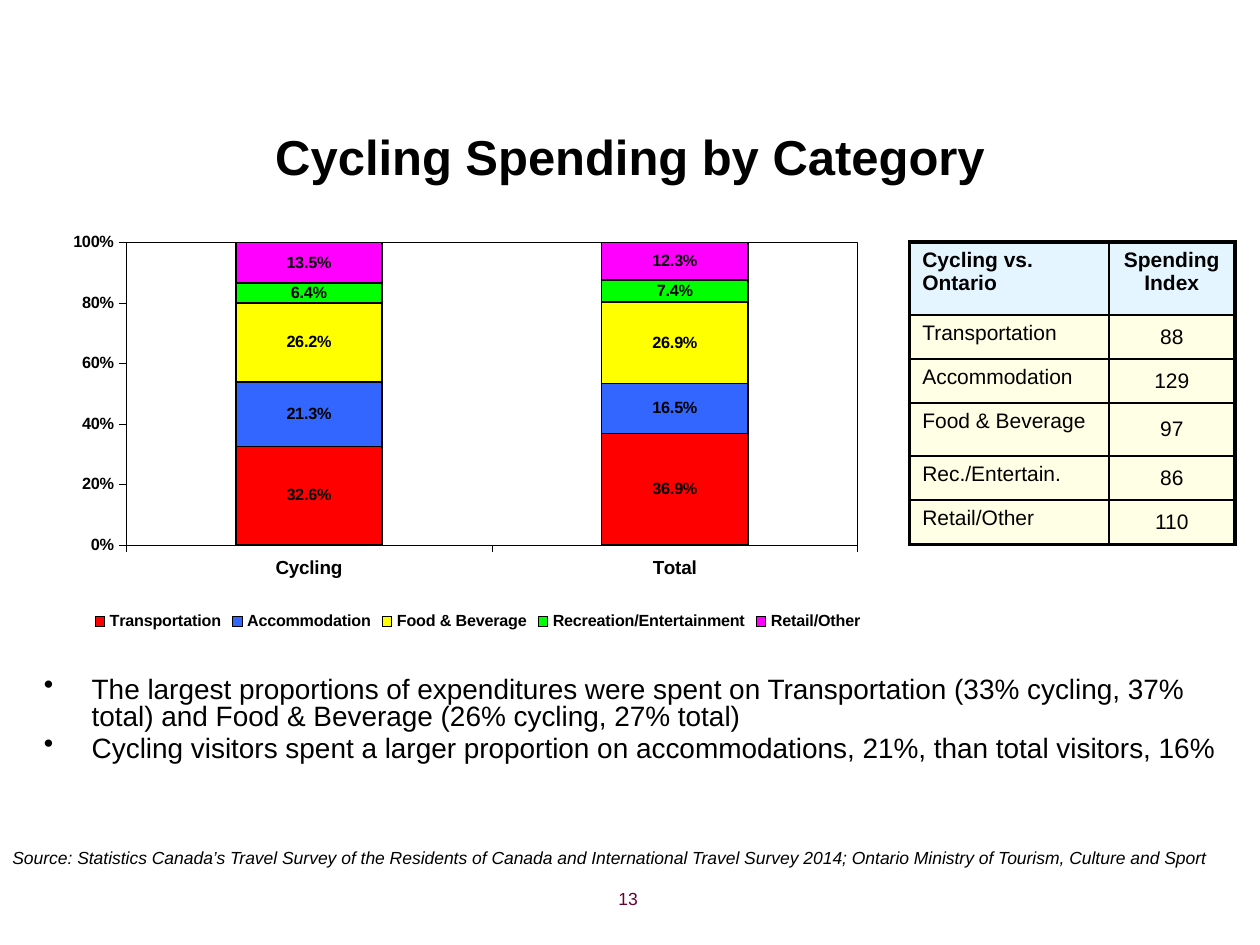
from lxml import etree
from pptx import Presentation
from pptx import util as u
from pptx.chart.data import CategoryChartData
from pptx.dml.color import RGBColor
from pptx.enum import chart as ch
from pptx.enum import text
from pptx.oxml import parse_xml
from pptx.oxml.ns import nsdecls, qn

FONT = "Arial"
BLACK = RGBColor(0x00, 0x00, 0x00)
MAROON = RGBColor(0x66, 0x00, 0x33)
PALE_BLUE = RGBColor(0xCC, 0xEC, 0xFF)
PALE_YELLOW = RGBColor(0xFF, 0xFF, 0xCC)
RED = RGBColor(0xFF, 0x00, 0x00)
BLUE = RGBColor(0x33, 0x66, 0xFF)
YELLOW = RGBColor(0xFF, 0xFF, 0x00)
GREEN = RGBColor(0x00, 0xFF, 0x00)
MAGENTA = RGBColor(0xFF, 0x00, 0xFF)

SPENDING = [
    ("Transportation", (0.326, 0.369), RED),
    ("Accommodation", (0.213, 0.165), BLUE),
    ("Food & Beverage", (0.262, 0.269), YELLOW),
    ("Recreation/Entertainment", (0.064, 0.074), GREEN),
    ("Retail/Other", (0.135, 0.123), MAGENTA),
]
INDEX_ROWS = [
    ("Cycling vs. Ontario", "Spending Index", 0.58),
    ("Transportation", "88", 0.35),
    ("Accommodation", "129", 0.35),
    ("Food & Beverage", "97", 0.42),
    ("Rec./Entertain.", "86", 0.35),
    ("Retail/Other", "110", 0.35),
]
FINDINGS = [
    "The largest proportions of expenditures were spent on Transportation "
    "(33% cycling, 37% total) and Food & Beverage (26% cycling, 27% total)",
    "Cycling visitors spent a larger proportion on accommodations, 21%, "
    "than total visitors, 16%",
]
SOURCE = (
    "Source: Statistics Canada’s Travel Survey of the Residents of Canada and "
    "International Travel Survey 2014; Ontario Ministry of Tourism, Culture and Sport"
)


def inches(box):
    """Turn a box of plain numbers into lengths."""
    return [u.Inches(value) for value in box]


def style_font(font, size, color=BLACK, bold=False, italic=False):
    """Set the face, size, colour and weight of a font."""
    font.name, font.size = FONT, u.Pt(size)
    font.bold, font.italic = bold, italic
    font.color.rgb = color


def add_run(paragraph, words, size, **style):
    """Append one styled run to a paragraph."""
    run = paragraph.add_run()
    run.text = words
    style_font(run.font, size, **style)


def add_text_frame(slide, box):
    """Add a wrapping text box and return its frame."""
    frame = slide.shapes.add_textbox(*inches(box)).text_frame
    frame.word_wrap = True
    return frame


def add_title(slide, box):
    """Place and fill the title placeholder."""
    title = slide.shapes.title
    title.left, title.top, title.width, title.height = inches(box)
    title.text_frame.vertical_anchor = text.MSO_ANCHOR.MIDDLE
    paragraph = title.text_frame.paragraphs[0]
    paragraph.alignment = text.PP_ALIGN.CENTER
    add_run(paragraph, "Cycling Spending by Category", 28, bold=True)


def set_layout(parent, position, x, y, width, height, inner=False):
    """Give a chart part a manual layout in fractions of the chart."""
    for old in parent.findall(qn("c:layout")):
        parent.remove(old)
    layout = etree.Element(qn("c:layout"))
    manual = etree.SubElement(layout, qn("c:manualLayout"))
    settings = [("layoutTarget", "inner")] if inner else []
    settings += [("xMode", "edge"), ("yMode", "edge")]
    settings += [("x", x), ("y", y), ("w", width), ("h", height)]
    for name, value in settings:
        etree.SubElement(manual, qn(f"c:{name}")).set("val", str(value))
    parent.insert(position, layout)


def style_axis(axis, size):
    """Give an axis its font, thin line and outer ticks."""
    style_font(axis.tick_labels.font, size, bold=True)
    axis.format.line.color.rgb = BLACK
    axis.format.line.width = u.Pt(0.25)
    axis.major_tick_mark = ch.XL_TICK_MARK.OUTSIDE
    axis.minor_tick_mark = ch.XL_TICK_MARK.NONE
    axis.has_major_gridlines = False


def add_spending_chart(slide, box):
    """Add the stacked chart of spending shares."""
    data = CategoryChartData(number_format="0.0%")
    data.categories = ["Cycling", "Total"]
    for name, values, _ in SPENDING:
        data.add_series(name, values)
    chart = slide.shapes.add_chart(
        ch.XL_CHART_TYPE.COLUMN_STACKED_100, *inches(box), data
    ).chart
    chart.has_title = False
    style_font(chart.font, 9.3, bold=True)

    plot = chart.plots[0]
    plot.gap_width, plot.overlap, plot.vary_by_categories = 150, 100, False
    for series, (_, _, color) in zip(plot.series, SPENDING):
        series.format.fill.solid()
        series.format.fill.fore_color.rgb = color
        series.format.line.color.rgb = BLACK
        series.format.line.width = u.Pt(1)
        labels = series.data_labels
        labels.show_value = True
        labels.number_format, labels.number_format_is_linked = "0.0%", False
        style_font(labels.font, 9.3, bold=True)

    style_axis(chart.category_axis, 10.8)
    axis = chart.value_axis
    style_axis(axis, 9.3)
    axis.minimum_scale, axis.maximum_scale, axis.major_unit = 0, 1, 0.2
    axis.tick_labels.number_format = "0%"
    axis.tick_labels.number_format_is_linked = False

    chart.has_legend = True
    legend = chart.legend
    legend.position = ch.XL_LEGEND_POSITION.BOTTOM
    legend.include_in_layout = False
    style_font(legend.font, 9.2, bold=True)
    set_layout(legend._element, 1, 0.06, 0.79, 0.94, 0.07)

    area = chart._chartSpace.chart.plotArea
    set_layout(area, 0, 0.105, 0.033, 0.884, 0.632, inner=True)
    area.append(parse_xml(
        f'<c:spPr {nsdecls("c", "a")}><a:noFill/><a:ln w="3175"><a:solidFill>'
        f'<a:srgbClr val="{BLACK}"/></a:solidFill></a:ln></c:spPr>'
    ))


def style_cell(cell, color, thick_sides):
    """Draw the borders of a cell and its half-transparent fill."""
    properties = cell._tc.get_or_add_tcPr()
    for side in "LRTB":
        width = u.Pt(2.25 if side in thick_sides else 1)
        properties.append(parse_xml(
            f'<a:ln{side} {nsdecls("a")} w="{width}"><a:solidFill>'
            f'<a:srgbClr val="{BLACK}"/></a:solidFill></a:ln{side}>'
        ))
    cell.fill.solid()
    cell.fill.fore_color.rgb = color
    shade = properties.find(qn("a:solidFill")).find(qn("a:srgbClr"))
    etree.SubElement(shade, qn("a:alpha")).set("val", "50000")


def add_index_table(slide, box):
    """Add the table of spending indexes."""
    table = slide.shapes.add_table(len(INDEX_ROWS), 2, *inches(box)).table
    table.first_row = table.horz_banding = False
    for column, width in zip(table.columns, (1.58, 1)):
        column.width = u.Inches(width)
    for i, (*words, height) in enumerate(INDEX_ROWS):
        table.rows[i].height = u.Inches(height)
        header, last = i == 0, i == len(INDEX_ROWS) - 1
        for j, label in enumerate(words):
            cell = table.cell(i, j)
            sides = "LR"[j] + ("T" if header else "") + ("B" if last else "")
            style_cell(cell, PALE_BLUE if header else PALE_YELLOW, sides)
            paragraph = cell.text_frame.paragraphs[0]
            if j:
                paragraph.alignment = text.PP_ALIGN.CENTER
            if j and not header:
                cell.vertical_anchor = text.MSO_ANCHOR.MIDDLE
                cell.margin_left = cell.margin_right = 0
                cell.margin_top = cell.margin_bottom = 0
            add_run(paragraph, label, 12, bold=header)


def add_findings(slide, box):
    """Add the bulleted findings."""
    frame = add_text_frame(slide, box)
    for i, words in enumerate(FINDINGS):
        paragraph = frame.add_paragraph() if i else frame.paragraphs[0]
        properties = paragraph._p.get_or_add_pPr()
        properties.set("marL", str(u.Inches(0.38)))
        properties.set("indent", str(-u.Inches(0.38)))
        etree.SubElement(properties, qn("a:buChar")).set("char", "•")
        paragraph.line_spacing = 0.8
        if i:
            paragraph.space_before = u.Pt(3.2)
        add_run(paragraph, words, 16)


def add_line(slide, box, words, alignment, **style):
    """Add a small single-line text."""
    paragraph = add_text_frame(slide, box).paragraphs[0]
    paragraph.alignment = alignment
    add_run(paragraph, words, 10, **style)


def main():
    """Build the slide and save it."""
    presentation = Presentation()
    presentation.slide_width, presentation.slide_height = inches((10, 7.5))
    slide = presentation.slides.add_slide(presentation.slide_layouts[5])
    add_title(slide, (0.5, 0.86, 9, 0.75))
    add_findings(slide, (0.25, 5.33, 9.5, 1.42))
    add_index_table(slide, (7.22, 1.92, 2.58, 2.4))
    add_line(slide, (2.83, 7, 2.33, 0.35), "13", text.PP_ALIGN.RIGHT, color=MAROON)
    add_spending_chart(slide, (0.31, 1.8, 6.57, 3.8))
    add_line(slide, (0, 6.67, 9.8, 0.27), SOURCE, text.PP_ALIGN.LEFT, italic=True)
    presentation.save("out.pptx")


if __name__ == "__main__":
    main()
